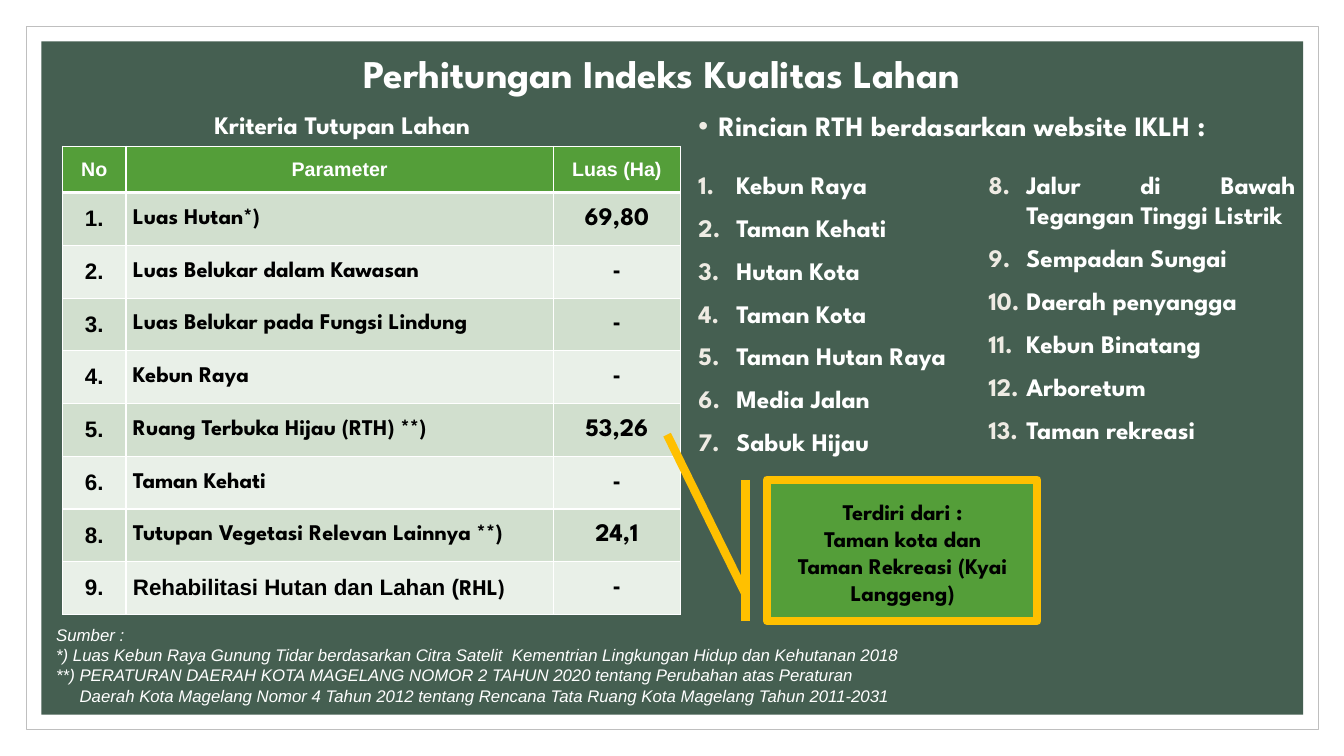
from dataclasses import dataclass

from lxml.etree import SubElement
from pptx import Presentation
from pptx.dml.color import RGBColor
from pptx.enum.shapes import MSO_SHAPE
from pptx.enum.text import MSO_ANCHOR, PP_ALIGN
from pptx.oxml import parse_xml
from pptx.oxml.ns import nsdecls, qn
from pptx.util import Pt

LEAGUE, ARIAL = "League Spartan", "Arial"
WHITE, BLACK, GREEN, DARK = "FFFFFF", "000000", "549E39", "455F51"
GOLD, CREAM, GREY = "FFC000", "EEEBE3", "BFBFBF"
BANDS = ("D1DFCE", "E9F0E8")
LEFT, MID, JUST = PP_ALIGN.LEFT, PP_ALIGN.CENTER, PP_ALIGN.JUSTIFY


@dataclass(frozen=True)
class Box:
    x: float
    y: float
    w: float
    h: float

    def place(self) -> tuple:
        return Pt(self.x), Pt(self.y), Pt(self.w), Pt(self.h)


@dataclass(frozen=True)
class Style:
    size: float
    font: str = LEAGUE
    color: str = WHITE
    bold: bool = True
    slant: bool = False
    align: PP_ALIGN = LEFT
    before: float = 0
    indent: float = 0
    hang: float = 0
    mark: str = ""
    start: int = 0


@dataclass(frozen=True)
class Block:
    box: Box
    style: Style
    lines: tuple


@dataclass(frozen=True)
class Row:
    num: str
    label: tuple
    area: str


def paint(color: str) -> RGBColor:
    return RGBColor.from_string(color)


def add_run(para, text: str, style: Style) -> None:
    run = para.add_run()
    run.text = text
    font = run.font
    font.name, font.size = style.font, Pt(style.size)
    font.bold, font.italic = style.bold, style.slant
    font.color.rgb = paint(style.color)


def set_para(para, style: Style) -> None:
    para.alignment = style.align
    para.space_before = Pt(style.before)
    props = para._p.get_or_add_pPr()
    props.set("marL", str(Pt(style.indent)))
    props.set("indent", str(Pt(-style.hang)))
    if style.mark or style.start:
        tint = SubElement(props, qn("a:buClr"))
        SubElement(tint, qn("a:srgbClr"), val=CREAM)
    if style.mark:
        SubElement(props, qn("a:buFont"), typeface=ARIAL)
        SubElement(props, qn("a:buChar"), char=style.mark)
    elif style.start:
        SubElement(props, qn("a:buFont"), typeface="+mj-lt")
        SubElement(props, qn("a:buAutoNum"), type="arabicPeriod", startAt=str(style.start))


def write(frame, lines: tuple, style: Style) -> None:
    frame.word_wrap = True
    for i, line in enumerate(lines):
        para = frame.add_paragraph() if i else frame.paragraphs[0]
        set_para(para, style)
        add_run(para, line, style)


def add_block(slide, block: Block) -> None:
    write(slide.shapes.add_textbox(*block.box.place()).text_frame, block.lines, block.style)


def add_form(slide, kind: MSO_SHAPE, box: Box, fill: str, line: str = "", width: float = 0):
    form = slide.shapes.add_shape(kind, *box.place())
    form.shadow.inherit = False
    form.fill.solid()
    form.fill.fore_color.rgb = paint(fill)
    if line:
        form.line.color.rgb = paint(line)
        form.line.width = Pt(width)
    else:
        form.line.fill.background()
    return form


def fill_cell(cell, pairs: tuple, fill: str, tight: bool, base: float = 1) -> None:
    """Each pair is a text with its style."""
    cell.fill.solid()
    cell.fill.fore_color.rgb = paint(fill)
    cell.vertical_anchor = MSO_ANCHOR.MIDDLE
    if tight:
        cell.margin_left = cell.margin_right = Pt(5)
        cell.margin_top = cell.margin_bottom = 0
    para = cell.text_frame.paragraphs[0]
    para.alignment = pairs[0][1].align
    for text, style in pairs:
        add_run(para, text, style)
    props = cell._tc.get_or_add_tcPr()
    for i, side in enumerate("LRTB"):
        width = Pt(base if side == "B" else 1)
        props.insert(i, parse_xml(
            f'<a:ln{side} {nsdecls("a")} w="{width}"><a:solidFill>'
            f'<a:srgbClr val="{WHITE}"/></a:solidFill></a:ln{side}>'))


HEAD = Style(14, ARIAL, align=MID)
NUM = Style(16, ARIAL, BLACK, align=MID)
NAME = Style(16, LEAGUE, BLACK)
PLAIN = Style(16, ARIAL, BLACK)
AREA = Style(18, LEAGUE, BLACK, align=MID)
TITLE = Style(28)
NOTE = Style(16, LEAGUE, BLACK, align=MID)
SUB = Style(18, before=9)
POINT = Style(20, align=JUST, before=9, indent=14.4, hang=14.4, mark="•")
FIRST = Style(18, align=JUST, before=9, indent=27, hang=27, start=1)
NEXT = Style(18, align=JUST, before=9, indent=27, hang=27, start=8)
SOURCE = Style(12, ARIAL, bold=False, slant=True, align=JUST, indent=18)
INSET = Style(12, ARIAL, bold=False, slant=True, align=JUST, indent=34.7)

BLOCKS = (
    Block(Box(146.2, 74.2, 213.8, 30.2), SUB, ("Kriteria Tutupan Lahan",)),
    Block(Box(491.8, 74.2, 440.6, 30.2), POINT, ("Rincian RTH berdasarkan website IKLH :",)),
    Block(Box(491.8, 117.4, 207.4, 225.4), FIRST, (
        "Kebun Raya", "Taman Kehati", "Hutan Kota", "Taman Kota",
        "Taman Hutan Raya", "Media Jalan", "Sabuk Hijau")),
    Block(Box(699.1, 117.4, 233.3, 198.7), NEXT, (
        "Jalur di Bawah Tegangan Tinggi Listrik", "Sempadan Sungai",
        "Daerah penyangga", "Kebun Binatang", "Arboretum", "Taman rekreasi")),
)
ROWS = (
    Row("1.", (("Luas Hutan*)", NAME),), "69,80"),
    Row("2.", (("Luas Belukar dalam Kawasan", NAME),), "-"),
    Row("3.", (("Luas Belukar pada Fungsi Lindung", NAME),), "-"),
    Row("4.", (("Kebun Raya", NAME),), "-"),
    Row("5.", (("Ruang Terbuka Hijau (RTH) **)", NAME),), "53,26"),
    Row("6.", (("Taman Kehati", NAME),), "-"),
    Row("8.", (("Tutupan Vegetasi Relevan Lainnya **)", NAME),), "24,1"),
    Row("9.", (("Rehabilitasi Hutan dan Lahan (", PLAIN), ("RHL)", NAME)), "-"),
)


def add_grid(slide) -> None:
    box = Box(44.6, 104.4, 441.4, 334.8)
    table = slide.shapes.add_table(len(ROWS) + 1, 3, *box.place()).table
    for col, width in zip(table.columns, (45.4, 305.3, 90.7)):
        col.width = Pt(width)
    for i, row in enumerate(table.rows):
        row.height = Pt(37.7 if i else 33.2)
    for j, text in enumerate(("No", "Parameter", "Luas (Ha)")):
        fill_cell(table.cell(0, j), ((text, HEAD),), GREEN, False, 3)
    for i, row in enumerate(ROWS):
        cells = ((row.num, NUM),), row.label, ((row.area, AREA if row.area != "-" else NOTE),)
        for j, pairs in enumerate(cells):
            fill_cell(table.cell(i + 1, j), pairs, BANDS[i % 2], j > 0)


def main() -> None:
    deck = Presentation()
    deck.slide_width, deck.slide_height = Pt(960), Pt(540)
    slide = deck.slides.add_slide(deck.slide_layouts[5])

    # Frame and panel, moved behind the title
    frame = add_form(slide, MSO_SHAPE.RECTANGLE, Box(18.7, 18.7, 923, 502.6), WHITE, GREY, 0.5)
    panel = add_form(slide, MSO_SHAPE.RECTANGLE, Box(29.5, 29.5, 901.4, 481), DARK)
    title = slide.shapes.title
    for form in (frame, panel):
        title._element.addprevious(form._element)

    # Title
    title.left, title.top, title.width, title.height = Box(252.7, 33.8, 478.8, 40.3).place()
    write(title.text_frame, ("Perhitungan Indeks Kualitas Lahan",), TITLE)
    title.text_frame.vertical_anchor = MSO_ANCHOR.MIDDLE
    title.text_frame.paragraphs[0].line_spacing = 0.9

    # Headings, lists and table
    for block in BLOCKS:
        add_block(slide, block)
    add_grid(slide)

    # Sources, the last line set in under the one above
    notes = slide.shapes.add_textbox(*Box(15.1, 442.8, 643.7, 65.5).place()).text_frame
    write(notes, (
        "Sumber :",
        "*) Luas Kebun Raya Gunung Tidar berdasarkan Citra Satelit  Kementrian Lingkungan Hidup dan Kehutanan 2018",
        "**) PERATURAN DAERAH KOTA MAGELANG NOMOR 2 TAHUN 2020 tentang Perubahan atas Peraturan",
        "Daerah Kota Magelang Nomor 4 Tahun 2012 tentang Rencana Tata Ruang Kota Magelang Tahun 2011-2031",
    ), SOURCE)
    set_para(notes.paragraphs[-1], INSET)

    # Callout on the green space row
    call = add_form(slide, MSO_SHAPE.LINE_CALLOUT_1_BORDER_AND_ACCENT_BAR,
                    Box(547.9, 342.7, 193, 100.8), GREEN, GOLD, 6)
    for i, value in enumerate((0.81, -0.08, -0.32, -0.37)):
        call.adjustments[i] = value
    label = add_form(slide, MSO_SHAPE.RECTANGLE, Box(553.7, 355, 182.2, 78.5), GREEN)
    label.text_frame.vertical_anchor = MSO_ANCHOR.MIDDLE
    write(label.text_frame, (
        "Terdiri dari :", "Taman kota dan", "Taman Rekreasi (Kyai Langgeng)"), NOTE)

    deck.save("out.pptx")


if __name__ == "__main__":
    main()
